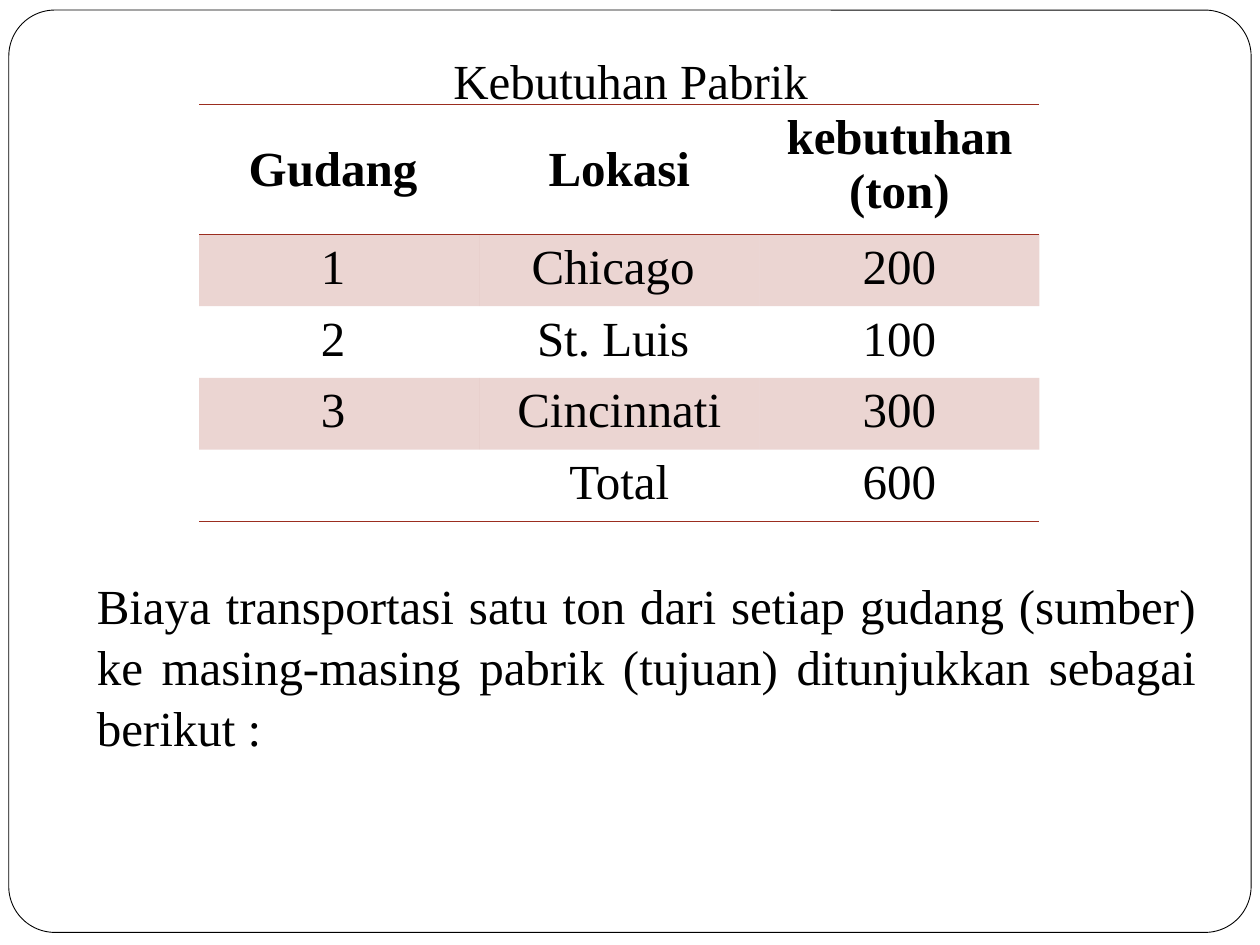
import pptx
import pptx.util
import pptx.dml.color
import pptx.enum.shapes
import pptx.enum.text
import pptx.oxml
import pptx.oxml.ns

Inches, Pt = pptx.util.Inches, pptx.util.Pt
RGB = pptx.dml.color.RGBColor.from_string
ALIGN = pptx.enum.text.PP_ALIGN
ANCHOR = pptx.enum.text.MSO_ANCHOR

COLORS = {"text": "000000", "paper": "FFFFFF", "accent": "9B2D1F"}
FONT = {"name": "Times New Roman", "size": Pt(28)}
NS = pptx.oxml.ns.nsdecls("a")
NO_STYLE = "{2D5ABB26-0587-4C30-8999-92F81FD0307C}"


def write(tf, text, align, anchor=ANCHOR.TOP, bold=False):
    tf.word_wrap = True
    tf.vertical_anchor = anchor
    p = tf.paragraphs[0]
    p.alignment = align
    r = p.add_run()
    r.text = text
    for key, value in {**FONT, "bold": bold}.items():
        setattr(r.font, key, value)
    r.font.color.rgb = RGB(COLORS["text"])
    return p


def rule(cell, tags):
    """Draw accent borders on a cell; tags are in schema order (lnT, lnB)."""
    tcPr = cell._tc.get_or_add_tcPr()
    for i, tag in enumerate(tags):
        tcPr.insert(i, pptx.oxml.parse_xml(
            f'<a:{tag} {NS} w="{Pt(1)}"><a:solidFill>'
            f'<a:srgbClr val="{COLORS["accent"]}"/></a:solidFill></a:{tag}>'))


prs = pptx.Presentation()
prs.slide_width, prs.slide_height = Inches(10), Inches(7.5)
s = prs.slides.add_slide(prs.slide_layouts[5])

# Rounded frame behind everything
frame = s.shapes.add_shape(
    pptx.enum.shapes.MSO_SHAPE.ROUNDED_RECTANGLE,
    Inches(0.07), Inches(0.08), Inches(9.86), Inches(7.32))
frame.adjustments[0] = 0.05
frame.shadow.inherit = False
frame.fill.solid()
frame.fill.fore_color.rgb = RGB(COLORS["paper"])
frame.line.color.rgb = RGB(COLORS["text"])
frame.line.width = Pt(0.5)
s.shapes._spTree.insert(2, frame._element)

# Title
title = s.shapes.title
title.left, title.top = Inches(0.42), Inches(0.33)
title.width, title.height = Inches(9.17), Inches(1.04)
p = write(title.text_frame, "Kebutuhan Pabrik", ALIGN.CENTER)
p.line_spacing = 1.04

# Table of needs
rows = [
    ("Gudang ", "Lokasi", "kebutuhan (ton)"),
    ("1 ", "Chicago ", "200"),
    ("2 ", "St. Luis ", "100"),
    ("3 ", "Cincinnati", "300"),
    ("", "Total", "600"),
]
table = s.shapes.add_table(len(rows), 3, Inches(1.58), Inches(0.83),
                           Inches(6.67), Inches(3.3)).table
table.first_row = table.horz_banding = False
table._tbl.tblPr.find(pptx.oxml.ns.qn("a:tableStyleId")).text = NO_STYLE
for i, row in enumerate(rows):
    table.rows[i].height = Inches(0.57 if i else 1.03)
    for j, text in enumerate(row):
        cell = table.cell(i, j)
        middle = i == 0 and j < 2
        cell.vertical_anchor = ANCHOR.MIDDLE if middle else ANCHOR.TOP
        if text:
            p = write(cell.text_frame, text, ALIGN.CENTER,
                      cell.vertical_anchor, bold=i == 0)
        if i % 2:
            cell.fill.solid()
            cell.fill.fore_color.rgb = RGB(COLORS["accent"])
            tint = cell._tc.tcPr.find(".//" + pptx.oxml.ns.qn("a:srgbClr"))
            tint.append(pptx.oxml.parse_xml(f'<a:alpha {NS} val="20000"/>'))
        else:
            cell.fill.background()
        if i == 0:
            rule(cell, ["lnT", "lnB"])
        elif i == len(rows) - 1:
            rule(cell, ["lnB"])

# Closing paragraph
body = s.shapes.add_textbox(Inches(0.67), Inches(4.5), Inches(8.92), Inches(1.04))
p = write(body.text_frame,
          "Biaya transportasi satu ton dari setiap gudang (sumber) ke "
          "masing-masing pabrik (tujuan) ditunjukkan sebagai berikut : ",
          ALIGN.JUSTIFY)
p.line_spacing = 1.04

prs.save("out.pptx")
